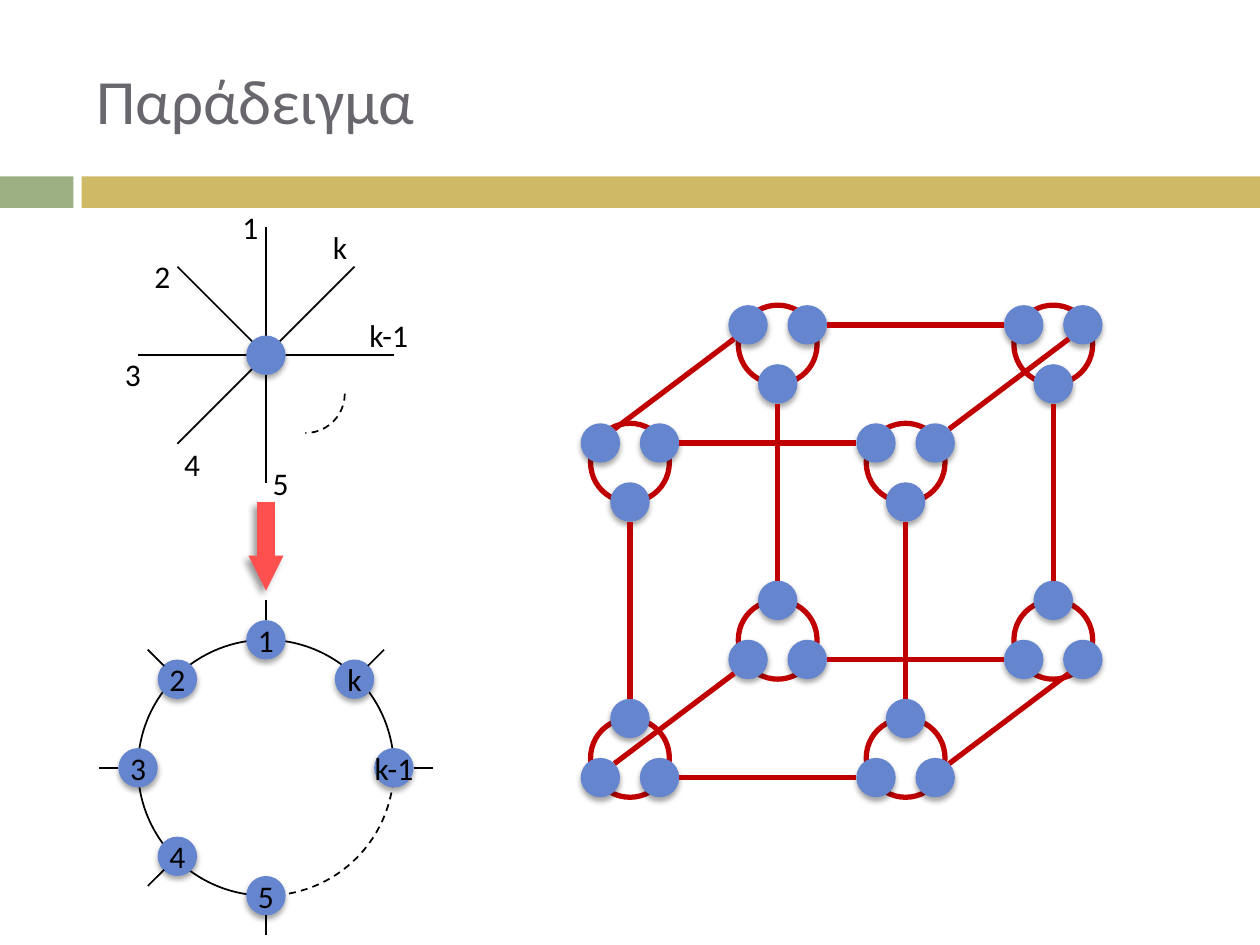
from dataclasses import dataclass

from lxml import etree
from pptx import Presentation
from pptx.dml.color import RGBColor
from pptx.enum import dml, shapes, text
from pptx.oxml import ns
from pptx.util import Pt

HEX = {"sage": "9CB084", "gold": "CEB966", "title": "69676D", "ink": "000000",
       "node": "6585CF", "edge": "C00000", "arrow": "FF5050"}
FONT = "Calibri"
DOT = 22.5                # node diameter
STEP = DOT / 2
RING = 73.1               # radius of the large ring
DIAG = 50.6               # diagonal node offset on that ring
SIDE = 16.9               # sideways node offset in a cube corner
MID = 152
HUB = 203
LOOP = 438.75


@dataclass(frozen=True)
class Shade:
    alpha: int
    blur: float
    dist: float
    angle: int


@dataclass(frozen=True)
class Node:
    name: str
    dx: float
    dy: float
    width: float = DOT


@dataclass(frozen=True)
class Label:
    name: str
    x: float
    y: float
    width: float = 16.9


SOFT = Shade(35, 3, 2, 90)
DEEP = Shade(40, 4, 3, 135)

NODES = [Node("1", 0, -RING), Node("2", -DIAG, -DIAG), Node("3", -RING, 0),
         Node("4", -DIAG, DIAG), Node("5", 0, RING),
         Node("k-1", RING, 0, 33.75), Node("k", DIAG, -DIAG)]
LABELS = [Label("1", 134.6, 118.8), Label("2", 84.4, 146.9), Label("3", 67.5, 203),
          Label("4", 101.3, 254.2), Label("5", 152, 265),
          Label("k-1", 208.1, 180.7, 28.1), Label("k", 185.8, 130.3)]

deck = Presentation()
deck.slide_width, deck.slide_height = Pt(720), Pt(540)
slide = deck.slides.add_slide(deck.slide_layouts[6])


def tint(key: str) -> RGBColor:
    return RGBColor.from_string(HEX[key])


def add_tag(parent, name: str, **attrs):
    return etree.SubElement(parent, ns.qn(f"a:{name}"),
                            {key: str(val) for key, val in attrs.items()})


def cast(effects, shade: Shade) -> None:
    """Put an outer shadow in an effect list."""
    outer = add_tag(effects, "outerShdw", blurRad=Pt(shade.blur), dist=Pt(shade.dist),
                    dir=shade.angle * 60000, rotWithShape=0)
    color = add_tag(outer, "srgbClr", val=HEX["ink"])
    add_tag(color, "alpha", val=shade.alpha * 1000)


def add_form(kind, x: float, y: float, width: float, height: float,
             fill: str = "", line: str = "", weight: float = 1):
    form = slide.shapes.add_shape(kind, Pt(x), Pt(y), Pt(width), Pt(height))
    form.shadow.inherit = False
    if fill:
        form.fill.solid()
        form.fill.fore_color.rgb = tint(fill)
    else:
        form.fill.background()
    if line:
        form.line.color.rgb = tint(line)
        form.line.width = Pt(weight)
    else:
        form.line.fill.background()
    return form


def add_arc(x: float, y: float, size: float, dash: bool = False):
    arc = add_form(shapes.MSO_SHAPE.ARC, x, y, size, size, line="ink")
    if dash:
        arc.line.dash_style = dml.MSO_LINE.DASH
    return arc


def add_node(x: float, y: float) -> None:
    """Draw a shaded dot centred on x, y."""
    dot = add_form(shapes.MSO_SHAPE.OVAL, x - STEP, y - STEP, DOT, DOT, "node")
    cast(dot._element.spPr.find(ns.qn("a:effectLst")), SOFT)


def add_line(x1: float, y1: float, x2: float, y2: float,
             color: str = "ink", weight: float = 1, shade: Shade | None = None):
    line = slide.shapes.add_connector(shapes.MSO_CONNECTOR.STRAIGHT,
                                      Pt(x1), Pt(y1), Pt(x2), Pt(y2))
    line.line.color.rgb = tint(color)
    line.line.width = Pt(weight)
    effects = add_tag(line._element.spPr, "effectLst")
    if shade:
        cast(effects, shade)
    return line


def add_text(words: str, x: float, y: float, width: float, height: float,
             size: float = 18, color: str = "ink", inset: float = 0,
             align=text.PP_ALIGN.CENTER) -> None:
    box = slide.shapes.add_textbox(Pt(x), Pt(y), Pt(width), Pt(height))
    frame = box.text_frame
    frame.word_wrap = True
    frame.vertical_anchor = text.MSO_ANCHOR.MIDDLE
    frame.margin_left = frame.margin_right = Pt(inset)
    frame.margin_top = frame.margin_bottom = 0
    frame.text = words
    para = frame.paragraphs[0]
    para.alignment = align
    font = para.runs[0].font
    font.name, font.size, font.color.rgb = FONT, Pt(size), tint(color)


def draw_star() -> None:
    """Draw a hub with its numbered spokes."""
    add_line(MID + DIAG, HUB - DIAG, MID - DIAG, HUB + DIAG)
    add_line(MID - DIAG, HUB - DIAG, MID, HUB)
    add_line(MID - RING, HUB, MID + RING, HUB)
    add_line(MID, HUB - RING, MID, HUB + RING)
    add_node(MID, HUB)
    for tag in LABELS:
        add_text(tag.name, tag.x, tag.y, tag.width, 21.6)
    add_arc(MID, HUB - 0.5, 45, dash=True).rotation = 90


def draw_loop() -> None:
    """Draw the ring of nodes that takes the place of the hub."""
    for start, end, dash in [(0.17, 54.505, True), (53.654, 0, False)]:
        arc = add_arc(MID - RING, LOOP - RING, 2 * RING, dash)
        arc.adjustments[0], arc.adjustments[1] = start, end
    for node in NODES:
        add_node(MID + node.dx, LOOP + node.dy)
    for node in NODES:
        add_text(node.name, MID + node.dx - node.width / 2,
                 LOOP + node.dy - STEP, node.width, DOT)
        slant = node.dx and node.dy
        near, far = (58.2, 67.5) if slant else (RING + STEP, RING + DOT)
        ux = (node.dx > 0) - (node.dx < 0)
        uy = (node.dy > 0) - (node.dy < 0)
        add_line(MID + ux * near, LOOP + uy * near, MID + ux * far, LOOP + uy * far)


def draw_knot(x: float, y: float, side: int) -> None:
    """Draw a cube corner; side is 1 at the bottom and -1 at the top."""
    add_form(shapes.MSO_SHAPE.OVAL, x - DOT, y - DOT, 2 * DOT, 2 * DOT,
             line="edge", weight=3)
    for dx, dy in [(-SIDE, STEP), (SIDE, STEP), (0, -DOT)]:
        add_node(x + dx, y + side * dy)


def draw_cube() -> None:
    left, right, trim = 360, 517.5, 8
    levels = {1: 433.1, -1: 264.4}
    back_x, back_y = 84.4, -67.5
    reach = SIDE + STEP
    for dx, dy in [(0, 0), (back_x, back_y)]:
        for x in (left + dx, right + dx):
            for side, y in levels.items():
                draw_knot(x, y + dy, side)
            add_line(x, levels[1] + dy - DOT - STEP,
                     x, levels[-1] + dy + DOT + STEP, "edge", 3)
        for side, y in levels.items():
            row = y + dy + side * STEP
            add_line(left + dx + reach, row, right + dx - reach, row, "edge", 3)
    for x in (left - SIDE, right + SIDE):
        for side, y in levels.items():
            row = y + side * STEP
            add_line(x + back_x - trim, row + back_y + trim,
                     x + trim, row - trim, "edge", 3)


add_form(shapes.MSO_SHAPE.RECTANGLE, 0, 100.8, 42, 18, "sage")
add_form(shapes.MSO_SHAPE.RECTANGLE, 46.6, 100.8, 673.4, 18, "gold")
add_text("Παράδειγμα", 48, 18, 642, 78, 36, "title", 7.2, text.PP_ALIGN.LEFT)
draw_loop()
draw_star()
draw_cube()
arrow = add_line(MID, 287, MID, 337.5, "arrow", 10, DEEP)
add_tag(arrow.line._get_or_add_ln(), "tailEnd", type="triangle", w="sm", len="sm")
deck.save("out.pptx")
